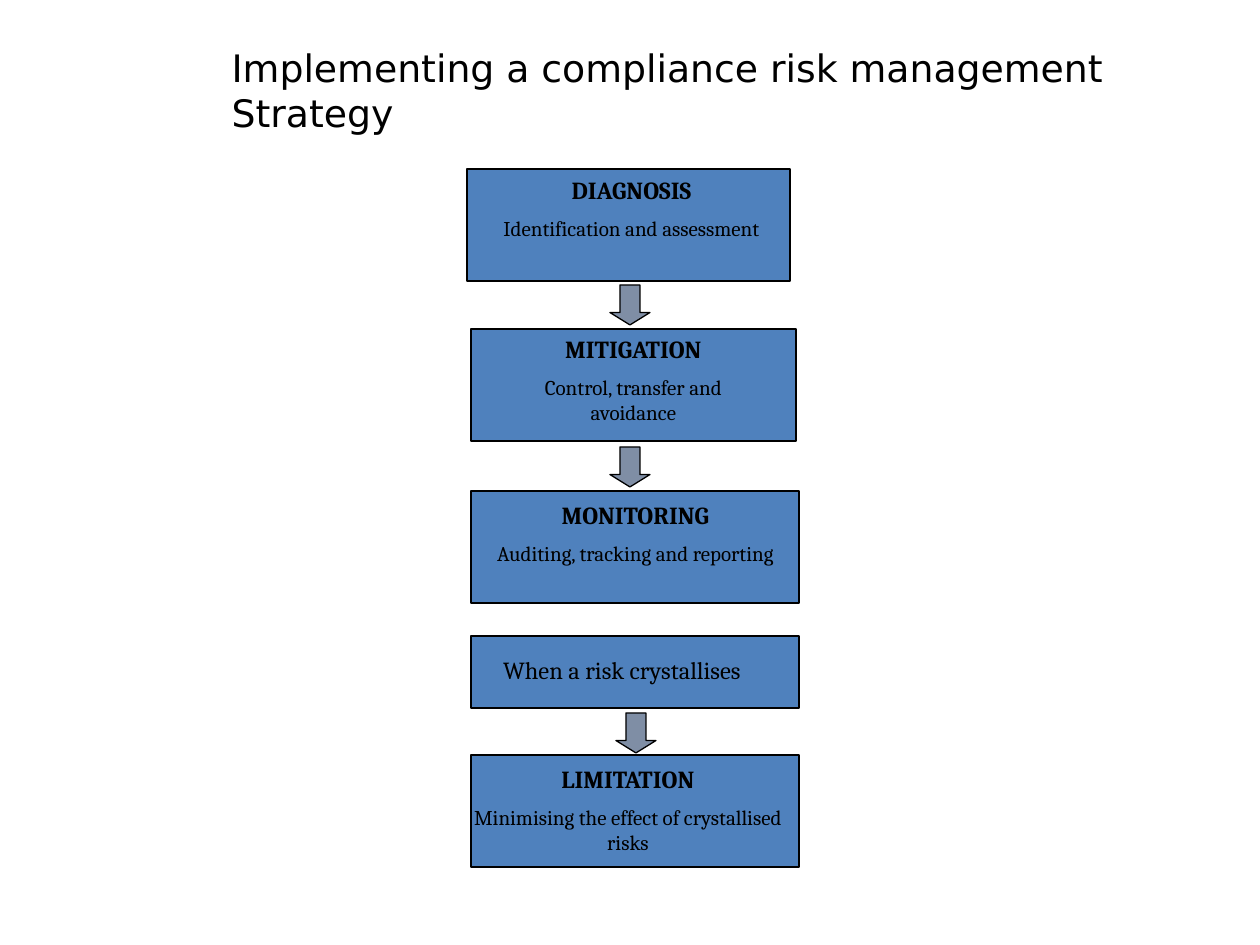
import pptx
import pptx.util
import pptx.dml.color
import pptx.enum.shapes
import pptx.enum.text

PX = 914400 // 126
BLUE, GREY, BLACK = "4F81BD", "7F8EA5", "000000"
TITLE = "Implementing a compliance risk management Strategy"
TITLE_AREA = (219, 45, 990, 90)

# box area, text area, heading, is heading bold, detail
STAGES = [
    ((467, 169, 323, 112), (491, 169, 281, 142), "DIAGNOSIS", True,
     "Identification and assessment"),
    ((471, 329, 325, 112), (493, 328, 281, 142), "MITIGATION", True,
     "Control, transfer and avoidance"),
    ((471, 491, 328, 112), (470, 494, 331, 123), "MONITORING", True,
     "Auditing, tracking and reporting"),
    ((471, 636, 328, 72), (472, 649, 300, 43), "When a risk crystallises", False, None),
    ((471, 755, 328, 112), (459, 758, 338, 142), "LIMITATION", True,
     "Minimising the effect of crystallised risks"),
]
ARROW_SIZE = 40
ARROWS = [(610, 285), (610, 447), (616, 713)]


def color(value):
    return pptx.dml.color.RGBColor.from_string(value)


def emu(area):
    return [length * PX for length in area]


def add_shape(slide, kind, area, fill):
    shape = slide.shapes.add_shape(kind, *emu(area))
    shape.shadow.inherit = False
    shape.fill.solid()
    shape.fill.fore_color.rgb = color(fill)
    shape.line.color.rgb = color(BLACK)
    shape.line.width = pptx.util.Pt(0.75)
    return shape


def add_run(para, text, size, font, bold=False):
    span = para.add_run()
    span.text = text
    span.font.size = pptx.util.Pt(size)
    span.font.name = font
    span.font.bold = bold
    span.font.color.rgb = color(BLACK)


def add_label(slide, area, heading, bold, detail):
    frame = slide.shapes.add_textbox(*emu(area)).text_frame
    frame.word_wrap = True
    para = frame.paragraphs[0]
    para.alignment = pptx.enum.text.PP_ALIGN.CENTER
    add_run(para, heading, 14, "Cambria", bold)
    if detail:
        para = frame.add_paragraph()
        para.alignment = pptx.enum.text.PP_ALIGN.CENTER
        para.space_before = pptx.util.Pt(6)
        add_run(para, detail, 12, "Cambria")


def main():
    deck = pptx.Presentation()
    deck.slide_width = pptx.util.Inches(10)
    deck.slide_height = pptx.util.Inches(7.5)
    slide = deck.slides.add_slide(deck.slide_layouts[5])

    title = slide.shapes.title
    title.left, title.top, title.width, title.height = emu(TITLE_AREA)
    frame = title.text_frame
    frame.word_wrap = True
    frame.auto_size = pptx.enum.text.MSO_AUTO_SIZE.NONE
    frame.vertical_anchor = pptx.enum.text.MSO_ANCHOR.MIDDLE
    frame.paragraphs[0].alignment = pptx.enum.text.PP_ALIGN.LEFT
    add_run(frame.paragraphs[0], TITLE, 21.6, "DejaVu Sans")

    shapes = pptx.enum.shapes.MSO_SHAPE
    for box_area, text_area, heading, bold, detail in STAGES:
        add_shape(slide, shapes.RECTANGLE, box_area, BLUE)
        add_label(slide, text_area, heading, bold, detail)

    for left, top in ARROWS:
        area = (left, top, ARROW_SIZE, ARROW_SIZE)
        arrow = add_shape(slide, shapes.DOWN_ARROW, area, GREY)
        arrow.adjustments[0] = 0.5
        arrow.adjustments[1] = 0.31

    deck.save("out.pptx")


if __name__ == "__main__":
    main()
